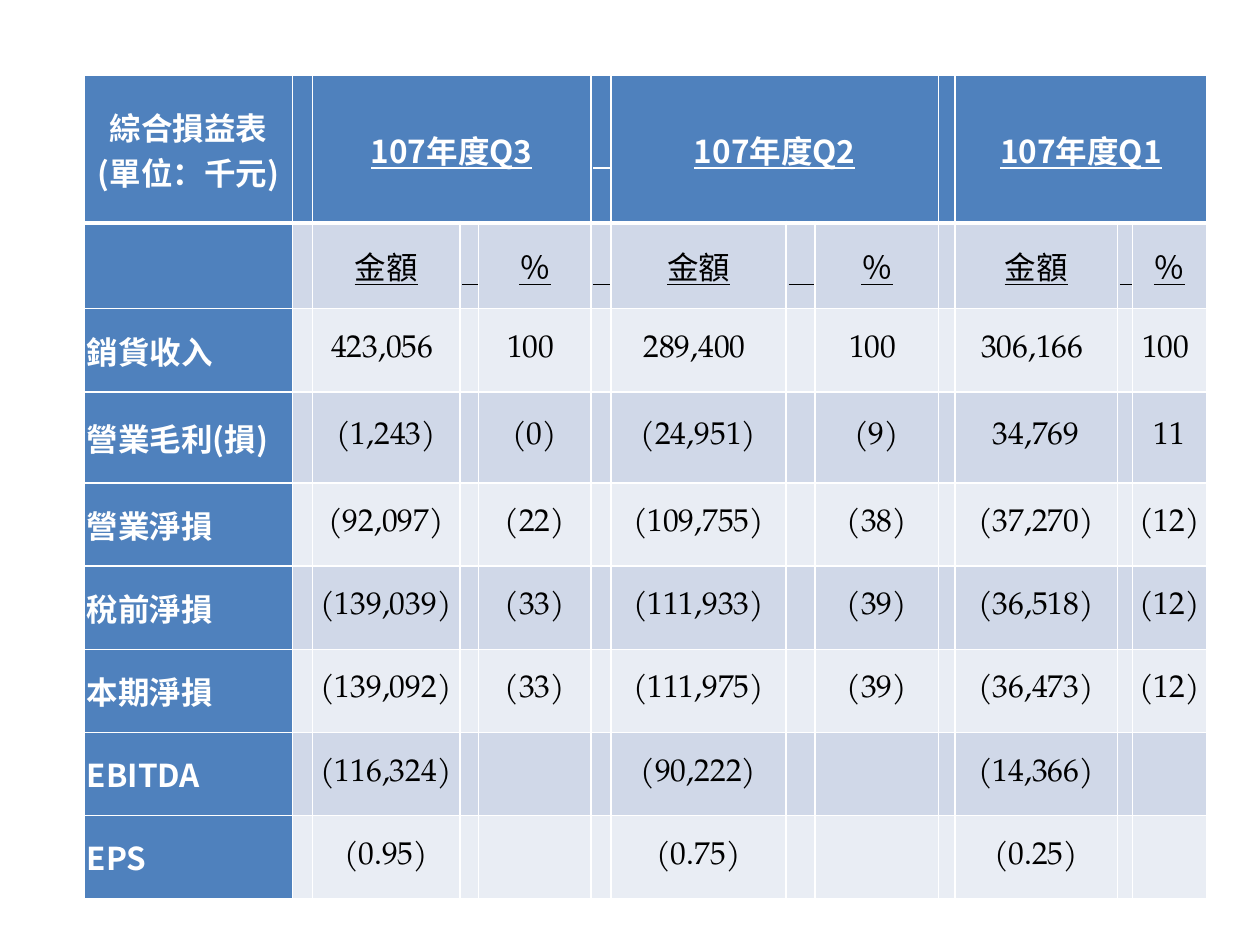
from dataclasses import dataclass

from lxml import etree
from pptx import Presentation
from pptx.dml.color import RGBColor
from pptx.enum.text import MSO_ANCHOR, PP_ALIGN
from pptx.oxml.ns import qn
from pptx.util import Inches, Pt

CENTER, JUSTIFY = PP_ALIGN.CENTER, PP_ALIGN.JUSTIFY
MIDDLE = MSO_ANCHOR.MIDDLE


@dataclass(frozen=True)
class Theme:
    header: str = "4F81BD"
    bands: tuple = ("E9EDF4", "D0D8E8")
    light: str = "FFFFFF"
    dark: str = "000000"
    label_font: str = "Noto Sans CJK SC"
    number_font: str = "TeX Gyre Pagella"
    size: float = 18
    thin: float = 1
    thick: float = 3


THEME = Theme()
CORNER = "綜合損益表 (單位：千元)"
QUARTERS = ["107年度Q3", "107年度Q2", "107年度Q1"]
MEASURES = ["金額", "％"]
RESULTS = [
    ("銷貨收入", "423,056 ", "100 ", "289,400 ", "100 ", "306,166 ", "100 "),
    ("營業毛利(損)", "(1,243)", "(0)", "(24,951)", "(9)", "34,769", "11"),
    ("營業淨損", "(92,097)", "(22)", "(109,755)", "(38)", "(37,270)", "(12)"),
    ("稅前淨損", "(139,039)", "(33)", "(111,933)", "(39)", "(36,518)", "(12)"),
    ("本期淨損", "(139,092)", "(33)", "(111,975)", "(39)", "(36,473)", "(12)"),
    ("EBITDA", "(116,324)", "", "(90,222)", "", "(14,366)", ""),
    ("EPS", "(0.95)", "", "(0.75)", "", "(0.25)", ""),
]
RULE = "　"
RULED_GAPS = {(0, 5), (1, 3), (1, 5), (1, 7), (1, 11)}
COLUMNS = [1.65, 0.16, 1.17, 0.15, 0.89, 0.16, 1.39, 0.23, 0.98, 0.13, 1.29, 0.12, 0.59]
ROWS = [1.17, 0.68] + [0.66] * len(RESULTS)
LEFT, TOP = 0.67, 0.6


def table_rows():
    """Spread the figures over every second column, leaving gaps between."""
    headings = [CORNER] + [text for quarter in QUARTERS for text in (quarter, "")]
    for row, values in enumerate([headings, [""] + MEASURES * len(QUARTERS), *RESULTS]):
        cells = [""] * len(COLUMNS)
        cells[::2] = values
        yield [RULE if (row, column) in RULED_GAPS else text
               for column, text in enumerate(cells)]


def add_border(cell, side, width):
    """Draw one edge of a cell in the light colour."""
    line = etree.SubElement(cell._tc.get_or_add_tcPr(), qn(f"a:{side}"), w=str(Pt(width)))
    fill = etree.SubElement(line, qn("a:solidFill"))
    etree.SubElement(fill, qn("a:srgbClr"), val=THEME.light)


def style_cell(cell, row, column):
    """Set the margins, edges and fill of a cell."""
    cell.vertical_anchor = MIDDLE
    cell.margin_left = cell.margin_right = Inches(0.02)
    cell.margin_top = cell.margin_bottom = 0
    thick_side = {0: "lnB", 1: "lnT"}.get(row)
    for side in ("lnL", "lnR", "lnT", "lnB"):
        add_border(cell, side, THEME.thick if side == thick_side else THEME.thin)
    is_header = row == 0 or column == 0
    cell.fill.solid()
    cell.fill.fore_color.rgb = RGBColor.from_string(
        THEME.header if is_header else THEME.bands[row % 2])


def write_cell(cell, text, row, column):
    """Write a heading, label or figure in its own style."""
    is_header = row == 0 or column == 0
    paragraph = cell.text_frame.paragraphs[0]
    paragraph.alignment = JUSTIFY if column == 0 and row else CENTER
    span = paragraph.add_run()
    span.text = text
    font = span.font
    font.size = Pt(THEME.size)
    font.bold = is_header
    font.underline = row < 2 and column > 0
    font.color.rgb = RGBColor.from_string(THEME.light if is_header else THEME.dark)
    font.name = THEME.label_font if is_header else THEME.number_font
    etree.SubElement(span._r.get_or_add_rPr(), qn("a:ea"), typeface=THEME.label_font)


def build_statement(slide):
    """Add the income statement table."""
    frame = slide.shapes.add_table(
        len(ROWS), len(COLUMNS), Inches(LEFT), Inches(TOP),
        Inches(sum(COLUMNS)), Inches(sum(ROWS)))
    table = frame.table
    for column, width in zip(table.columns, COLUMNS):
        column.width = Inches(width)
    for row, height in zip(table.rows, ROWS):
        row.height = Inches(height)
    for row, texts in enumerate(table_rows()):
        for column, text in enumerate(texts):
            cell = table.cell(row, column)
            style_cell(cell, row, column)
            if text:
                write_cell(cell, text, row, column)
    for quarter in range(len(QUARTERS)):
        first = 2 + 4 * quarter
        table.cell(0, first).merge(table.cell(0, first + 2))


def main():
    """Build the deck and save it."""
    deck = Presentation()
    deck.slide_width, deck.slide_height = Inches(10), Inches(7.5)
    build_statement(deck.slides.add_slide(deck.slide_layouts[6]))
    deck.save("out.pptx")


if __name__ == "__main__":
    main()
